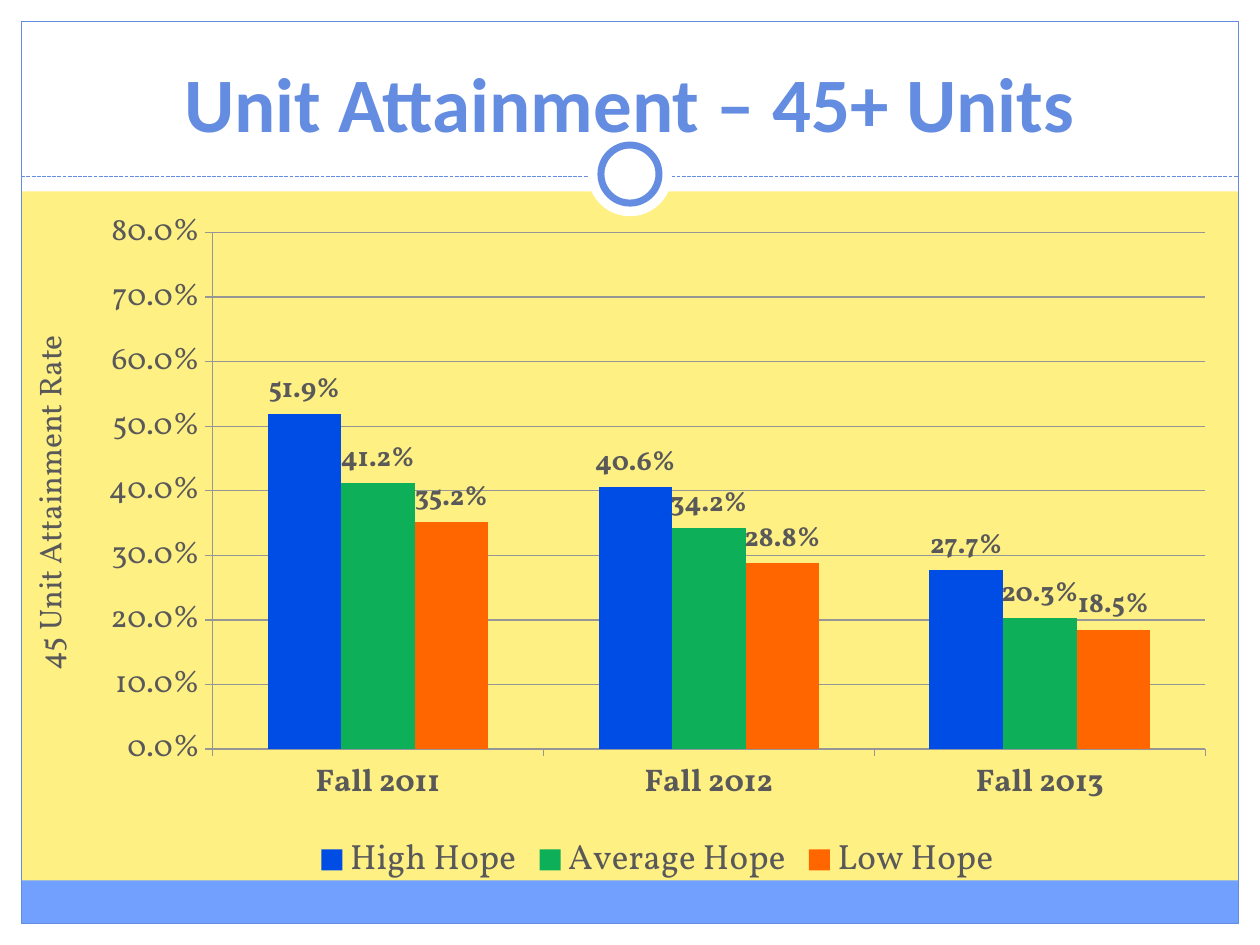
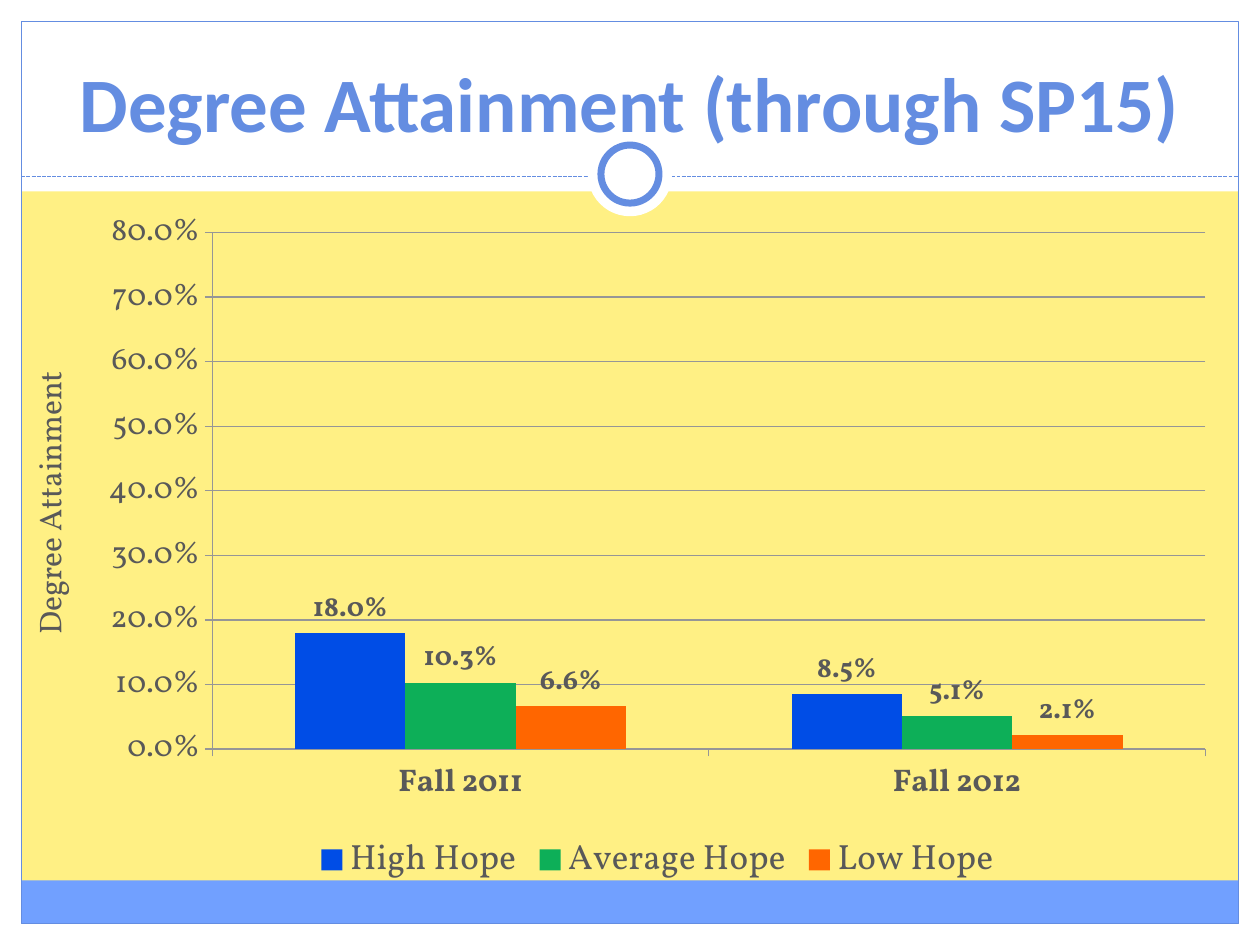
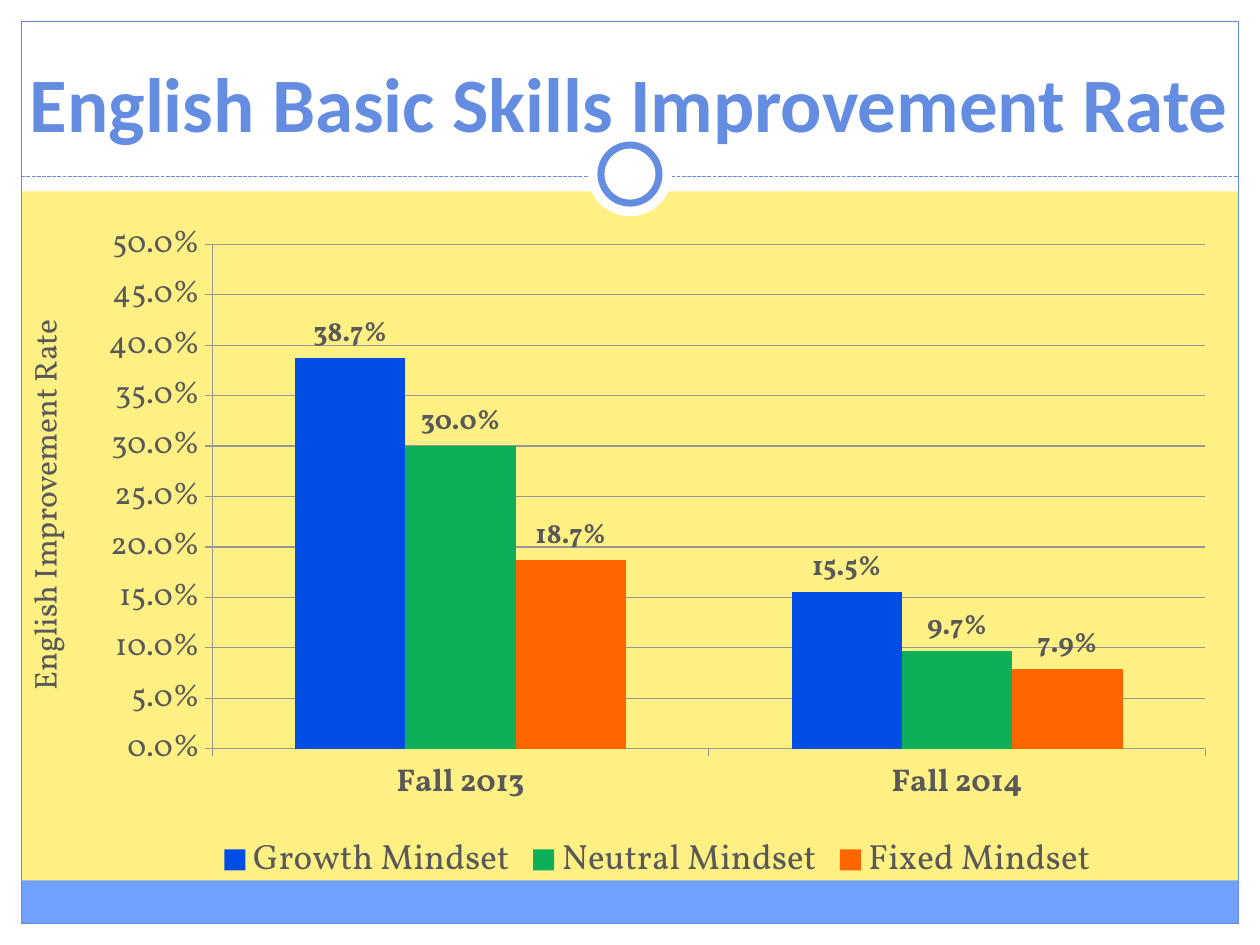
from lxml import etree
from pptx import Presentation
from pptx.chart.data import CategoryChartData
from pptx.dml.color import RGBColor
from pptx.enum import chart as ch, dml, shapes, text
from pptx.oxml.ns import qn
from pptx.util import Cm, Pt

WHITE = RGBColor(0xFF, 0xFF, 0xFF)
YELLOW = RGBColor(0xFF, 0xF0, 0x84)
BAND = RGBColor(0x71, 0xA0, 0xFF)
ACCENT = RGBColor(0x64, 0x8D, 0xE1)
GREY = RGBColor(0x59, 0x59, 0x59)
GRID = RGBColor(0x96, 0x96, 0x96)
SERIES = (RGBColor(0x00, 0x4D, 0xE6), RGBColor(0x0D, 0xAF, 0x58), RGBColor(0xFF, 0x66, 0x00))

TITLE_FONT = "Calibri"
BODY_FONT = "Vollkorn"
PERCENT = "0.0%"
WIDTH, HEIGHT, EDGE = 25.4, 19.05, 0.43
HOPE = ("High Hope", "Average Hope", "Low Hope")
MINDSET = ("Growth Mindset", "Neutral Mindset", "Fixed Mindset")
HOPE_PLOT = (0.11, 0.03, 0.87, 0.76)
MINDSET_PLOT = (0.11, 0.05, 0.87, 0.74)


class Deck:
    def __init__(self):
        self.prs = Presentation()
        self.prs.slide_width, self.prs.slide_height = Cm(WIDTH), Cm(HEIGHT)
        self.s = None

    def slide(self):
        self.s = self.prs.slides.add_slide(self.prs.slide_layouts[6])
        fill = self.s.background.fill
        fill.solid()
        fill.fore_color.rgb = YELLOW
        self.frame()

    def frame(self):
        rect, oval = shapes.MSO_SHAPE.RECTANGLE, shapes.MSO_SHAPE.OVAL
        inner = WIDTH - 2 * EDGE
        for box in ((0, HEIGHT - EDGE, WIDTH, EDGE), (0, 0, WIDTH, 3.86),
                    (0, 0, EDGE, HEIGHT), (WIDTH - EDGE, 0, EDGE, HEIGHT)):
            self.shape(rect, box, WHITE)
        self.shape(rect, (EDGE, 17.75, inner, 0.87), BAND)
        self.shape(rect, (EDGE, EDGE, inner, HEIGHT - 2 * EDGE), line=0.75)
        self.dashes(EDGE, WIDTH - EDGE, 3.56)
        for size, line in ((1.7, None), (1.17, 4)):
            self.shape(oval, ((WIDTH - size) / 2, 3.51 - size / 2, size, size), WHITE, line)

    def shape(self, kind, box, fill=None, line=None):
        sp = self.s.shapes.add_shape(kind, *map(Cm, box))
        sp.shadow.inherit = False
        if fill is None:
            sp.fill.background()
        else:
            sp.fill.solid()
            sp.fill.fore_color.rgb = fill
        if line is None:
            sp.line.fill.background()
        else:
            sp.line.color.rgb = ACCENT
            sp.line.width = Pt(line)

    def dashes(self, left, right, y):
        cx = self.s.shapes.add_connector(
            shapes.MSO_CONNECTOR.STRAIGHT, Cm(left), Cm(y), Cm(right), Cm(y))
        cx.line.color.rgb = ACCENT
        cx.line.width = Pt(0.75)
        cx.line.dash_style = dml.MSO_LINE.SQUARE_DOT
        etree.SubElement(cx._element.spPr, qn("a:effectLst"))

    def text(self, words, box, size, font, color, bold=False):
        sp = self.s.shapes.add_textbox(*map(Cm, box))
        tf = sp.text_frame
        tf.word_wrap = True
        p = tf.paragraphs[0]
        p.alignment = text.PP_ALIGN.CENTER
        r = p.add_run()
        r.text = words
        self.font(r.font, size, font, color, bold)
        return sp

    def font(self, f, size, name=BODY_FONT, color=GREY, bold=False):
        f.size, f.name, f.bold = Pt(size), name, bold
        f.color.rgb = color

    def title(self, words, margin=0.64):
        box = (margin, -0.08, WIDTH - 2 * margin, 3.18)
        sp = self.text(words, box, 44, TITLE_FONT, ACCENT, True)
        sp.text_frame.vertical_anchor = text.MSO_ANCHOR.BOTTOM

    def axis_label(self, words, left=0.48, top=5.59, height=9.09):
        sp = self.text(words, (left, top, 1.27, height), 18, BODY_FONT, GREY)
        sp._element.txBody.bodyPr.set("vert", "vert270")

    def chart(self, cats, names, rows, top, step, plot_box):
        data = CategoryChartData(number_format=PERCENT)
        data.categories = cats
        for name, row in zip(names, rows):
            data.add_series(name, row)
        chart = self.s.shapes.add_chart(
            ch.XL_CHART_TYPE.COLUMN_CLUSTERED,
            *map(Cm, (1.75, 4.24, 23.01, 13.74)), data).chart
        chart.has_title = False
        self.font(chart.font, 18)
        chart.has_legend = True
        chart.legend.position = ch.XL_LEGEND_POSITION.BOTTOM
        chart.legend.include_in_layout = False
        self.font(chart.legend.font, 20)

        for axis in (chart.category_axis, chart.value_axis):
            axis.major_tick_mark = ch.XL_TICK_MARK.OUTSIDE
            axis.minor_tick_mark = ch.XL_TICK_MARK.NONE
            self.hairline(axis.format.line)
        self.font(chart.category_axis.tick_labels.font, 18, bold=True)
        axis = chart.value_axis
        axis.minimum_scale, axis.maximum_scale, axis.major_unit = 0, top, step
        axis.has_major_gridlines = True
        self.hairline(axis.major_gridlines.format.line)
        axis.tick_labels.number_format = PERCENT
        axis.tick_labels.number_format_is_linked = False

        plot = chart.plots[0]
        plot.gap_width, plot.overlap, plot.vary_by_categories = 150, 0, False
        for series, color in zip(plot.series, SERIES):
            series.format.fill.solid()
            series.format.fill.fore_color.rgb = color
            labels = series.data_labels
            labels.show_value = True
            labels.number_format = PERCENT
            labels.number_format_is_linked = False
            labels.position = ch.XL_LABEL_POSITION.OUTSIDE_END
            self.font(labels.font, 16, bold=True)
        self.place_plot(chart, plot_box)

    def hairline(self, line):
        line.color.rgb = GRID
        line.width = Pt(0.75)

    def place_plot(self, chart, box):
        area = chart._chartSpace.find(".//" + qn("c:plotArea"))
        for old in area.findall(qn("c:layout")):
            area.remove(old)
        layout = etree.Element(qn("c:layout"))
        area.insert(0, layout)
        manual = etree.SubElement(layout, qn("c:manualLayout"))
        settings = [("layoutTarget", "inner"), ("xMode", "edge"), ("yMode", "edge")]
        for tag, val in settings + list(zip("xywh", box)):
            etree.SubElement(manual, qn("c:" + tag)).set("val", str(val))


def main():
    deck = Deck()

    deck.slide()
    deck.title("Unit Attainment – 45+ Units")
    deck.axis_label("45 Unit Attainment Rate")
    deck.chart(("Fall 2011", "Fall 2012", "Fall 2013"), HOPE,
               ((0.519, 0.406, 0.277), (0.412, 0.342, 0.203), (0.352, 0.288, 0.185)),
               0.8, 0.1, HOPE_PLOT)

    deck.slide()
    deck.title("Degree Attainment (through SP15)")
    deck.axis_label("Degree Attainment")
    deck.chart(("Fall 2011", "Fall 2012"), HOPE,
               ((0.18, 0.085), (0.103, 0.051), (0.066, 0.021)),
               0.8, 0.1, HOPE_PLOT)

    deck.slide()
    deck.title("English Basic Skills Improvement Rate", margin=0)
    deck.axis_label("English Improvement Rate", left=0.38, top=4.78, height=10.8)
    deck.chart(("Fall 2013", "Fall 2014"), MINDSET,
               ((0.387, 0.155), (0.3, 0.097), (0.187, 0.079)),
               0.5, 0.05, MINDSET_PLOT)

    deck.prs.save("out.pptx")


if __name__ == "__main__":
    main()
